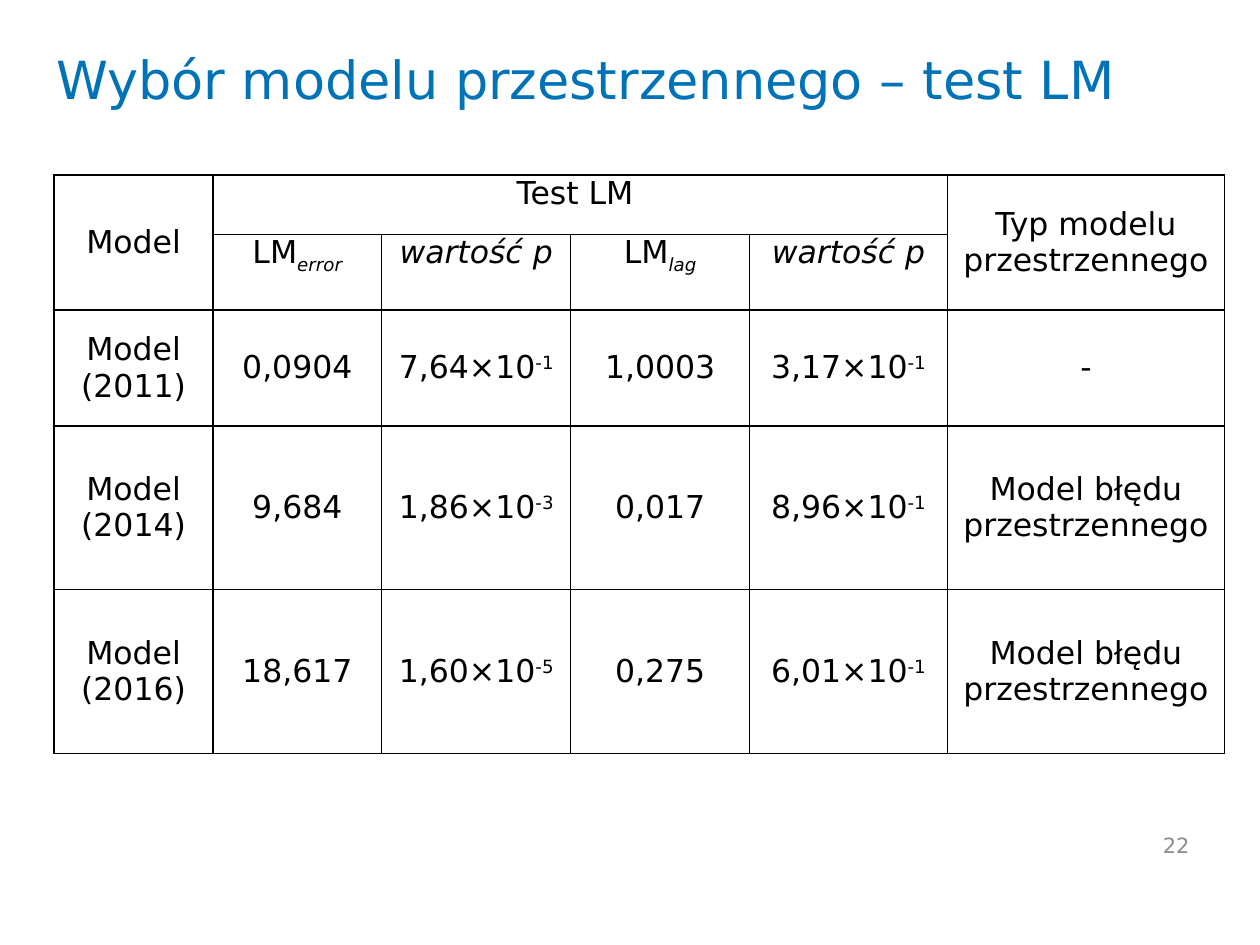
from dataclasses import dataclass

from lxml.etree import SubElement
from pptx import Presentation
from pptx.dml.color import RGBColor
from pptx.enum.text import MSO_ANCHOR as Anchor, PP_ALIGN as Align
from pptx.oxml.ns import qn
from pptx.util import Inches, Pt


@dataclass(frozen=True)
class Theme:
    font: str = "DejaVu Sans"
    title_color: str = "0072B7"
    text_color: str = "000000"
    number_color: str = "8C8C8C"
    border_color: str = "000000"
    title_size: int = 30
    table_size: int = 18
    number_size: int = 12
    border_width: int = 1


THEME = Theme()
BASELINES = {"_": "-25000", "^": "30000"}
COLUMN_WIDTHS = [1.26, 1.34, 1.5, 1.42, 1.57, 2.2]
ROW_HEIGHTS = [0.47, 0.45, 0.92, 1.3, 1.3]
P_VALUE = "wartość p"
ERROR_MODEL = "Model błędu przestrzennego"
ROWS = [
    ["Model", "Test LM ", "", "", "", "Typ modelu przestrzennego"],
    ["", "LM_error", P_VALUE, "LM_lag", P_VALUE, ""],
    ["Model (2011)", "0,0904", "7,64×10^-1", "1,0003", "3,17×10^-1", "-"],
    ["Model (2014)", "9,684", "1,86×10^-3", "0,017", "8,96×10^-1", ERROR_MODEL],
    ["Model (2016)", "18,617", "1,60×10^-5", "0,275", "6,01×10^-1", ERROR_MODEL],
]
MERGES = [((0, 0), (1, 0)), ((0, 1), (0, 4)), ((0, 5), (1, 5))]


def style_paragraph(paragraph, size, color, alignment):
    paragraph.alignment = alignment
    paragraph.font.name = THEME.font
    paragraph.font.size = Pt(size)
    paragraph.font.color.rgb = RGBColor.from_string(color)


def add_text(slide, text, box, size, color, alignment):
    frame = slide.shapes.add_textbox(*map(Inches, box)).text_frame
    frame.word_wrap = True
    frame.vertical_anchor = Anchor.MIDDLE
    paragraph = frame.paragraphs[0]
    paragraph.text = text
    style_paragraph(paragraph, size, color, alignment)


def add_runs(paragraph, text):
    marker = next((mark for mark in BASELINES if mark in text), None)
    base, _, script = text.partition(marker) if marker else (text, "", "")
    paragraph.add_run().text = base
    if script:
        run = paragraph.add_run()
        run.text = script
        run.font.italic = marker == "_"
        run._r.get_or_add_rPr().set("baseline", BASELINES[marker])


def set_borders(cell):
    properties = cell._tc.get_or_add_tcPr()
    for side in ("a:lnL", "a:lnR", "a:lnT", "a:lnB"):
        line = SubElement(properties, qn(side), w=str(Pt(THEME.border_width)))
        fill = SubElement(line, qn("a:solidFill"))
        SubElement(fill, qn("a:srgbClr"), val=THEME.border_color)


def fill_cell(cell, text, anchor):
    set_borders(cell)
    cell.fill.background()
    cell.margin_left = cell.margin_right = Inches(0.05)
    cell.margin_top = cell.margin_bottom = 0
    cell.vertical_anchor = anchor
    paragraph = cell.text_frame.paragraphs[0]
    style_paragraph(paragraph, THEME.table_size, THEME.text_color, Align.CENTER)
    if text:
        add_runs(paragraph, text)
    if text == P_VALUE:
        paragraph.runs[0].font.italic = True


def add_results_table(slide):
    table = slide.shapes.add_table(
        len(ROWS), len(COLUMN_WIDTHS), Inches(0.43), Inches(1.39),
        Inches(sum(COLUMN_WIDTHS)), Inches(sum(ROW_HEIGHTS)),
    ).table
    table.first_row = table.horz_banding = False
    for column, width in zip(table.columns, COLUMN_WIDTHS):
        column.width = Inches(width)
    for row, height in zip(table.rows, ROW_HEIGHTS):
        row.height = Inches(height)
    for row_index, texts in enumerate(ROWS):
        for column_index, text in enumerate(texts):
            is_test_header = row_index < 2 and 0 < column_index < 5
            anchor = Anchor.TOP if is_test_header else Anchor.MIDDLE
            fill_cell(table.cell(row_index, column_index), text, anchor)
    for first, last in MERGES:
        table.cell(*first).merge(table.cell(*last))


def main():
    presentation = Presentation()
    presentation.slide_width = Inches(10)
    presentation.slide_height = Inches(7.5)
    slide = presentation.slides.add_slide(presentation.slide_layouts[6])
    add_text(slide, "Wybór modelu przestrzennego – test LM", (0.35, 0, 9, 1.25),
             THEME.title_size, THEME.title_color, Align.LEFT)
    add_results_table(slide)
    add_text(slide, "22", (8.86, 6.51, 0.68, 0.4),
             THEME.number_size, THEME.number_color, Align.RIGHT)
    presentation.save("out.pptx")


if __name__ == "__main__":
    main()
